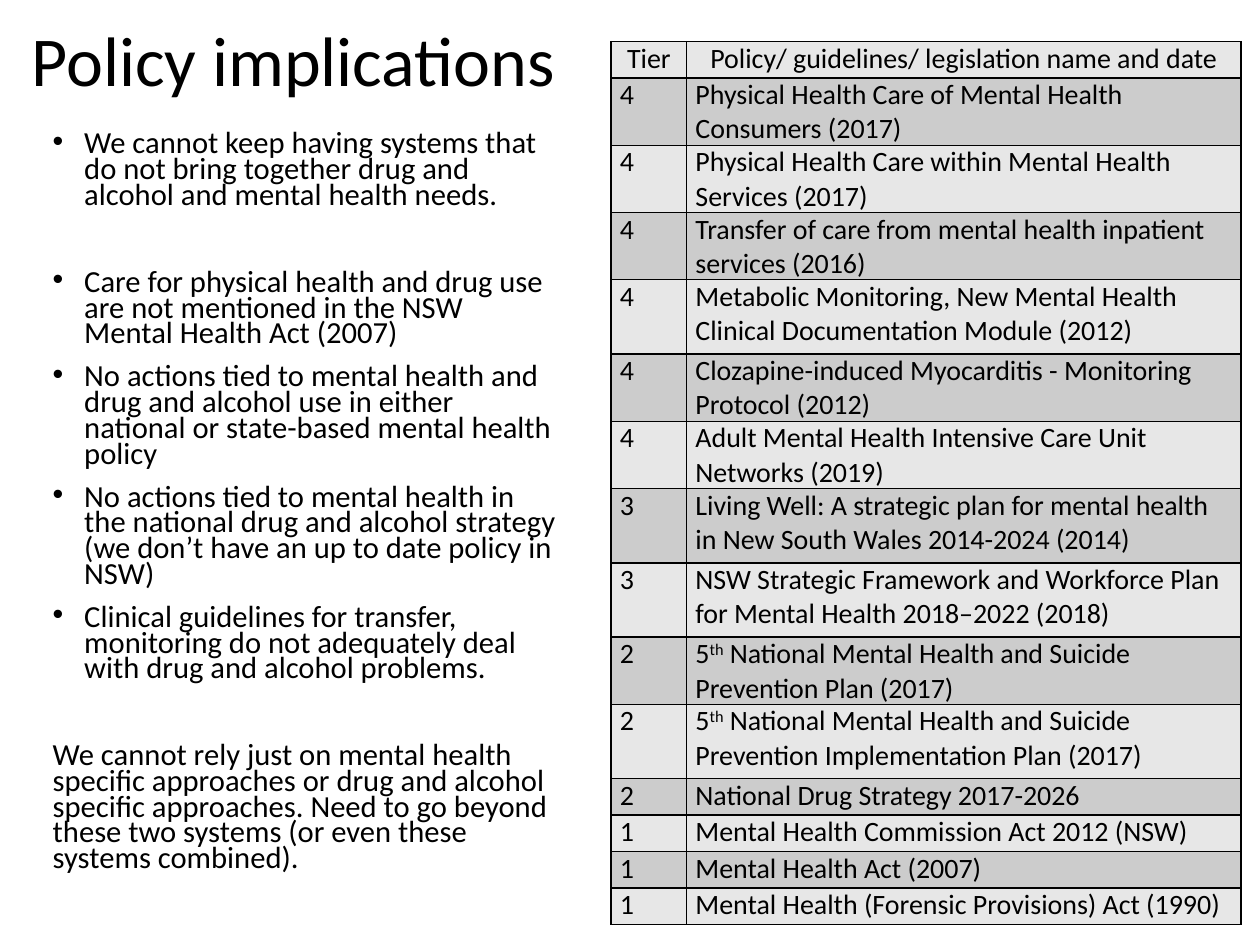
from typing import NamedTuple

from lxml.etree import SubElement
from pptx import Presentation
from pptx.dml.color import RGBColor
from pptx.enum.text import MSO_ANCHOR, MSO_AUTO_SIZE, PP_ALIGN
from pptx.oxml import parse_xml
from pptx.oxml.ns import nsdecls, qn
from pptx.util import Inches, Pt

BLACK = RGBColor(0x00, 0x00, 0x00)
LIGHT = RGBColor(0xE7, 0xE7, 0xE7)
DARK = RGBColor(0xCC, 0xCC, 0xCC)
FONT = "Calibri"
GAP, WIDE_GAP = 10, 35
ROW, TALL_ROW = 0.29, 0.59


class Point(NamedTuple):
    text: str
    gap: float = GAP
    bullet: bool = True


class Policy(NamedTuple):
    tier: str
    name: str
    height: float = ROW
    ordinal: str = ""  # number written with a raised "th" before the name


POINTS = [
    Point("We cannot keep having systems that do not bring together drug and "
          "alcohol and mental health needs."),
    Point("Care for physical health and drug use are not mentioned in the NSW "
          "Mental Health Act (2007)", WIDE_GAP),
    Point("No actions tied to mental health and drug and alcohol use in either "
          "national or state-based mental health policy"),
    Point("No actions tied to mental health in the national drug and alcohol "
          "strategy (we don’t have an up to date policy in NSW)"),
    Point("Clinical guidelines for transfer, monitoring do not adequately deal "
          "with drug and alcohol problems."),
    Point("We cannot rely just on mental health specific approaches or drug and "
          "alcohol specific approaches. Need to go beyond these two systems "
          "(or even these systems combined).", WIDE_GAP, bullet=False),
]

POLICIES = [
    Policy("Tier", "Policy/ guidelines/ legislation name and date"),
    Policy("4", "Physical Health Care of Mental Health Consumers (2017)"),
    Policy("4", "Physical Health Care within Mental Health Services (2017)"),
    Policy("4", "Transfer of care from mental health inpatient services (2016)"),
    Policy("4", "Metabolic Monitoring, New Mental Health Clinical Documentation "
                "Module (2012)", TALL_ROW),
    Policy("4", "Clozapine-induced Myocarditis - Monitoring Protocol (2012)"),
    Policy("4", "Adult Mental Health Intensive Care Unit Networks (2019)"),
    Policy("3", "Living Well: A strategic plan for mental health in New South "
                "Wales 2014-2024 (2014)", TALL_ROW),
    Policy("3", "NSW Strategic Framework and Workforce Plan for Mental Health "
                "2018–2022 (2018)", TALL_ROW),
    Policy("2", " National Mental Health and Suicide Prevention Plan (2017)",
           ordinal="5"),
    Policy("2", " National Mental Health and Suicide Prevention Implementation "
                "Plan (2017)", TALL_ROW, ordinal="5"),
    Policy("2", "National Drug Strategy 2017-2026"),
    Policy("1", "Mental Health Commission Act 2012 (NSW)"),
    Policy("1", "Mental Health Act (2007)"),
    Policy("1", "Mental Health (Forensic Provisions) Act (1990)"),
]


def add_run(p, text: str, size: float, raised: bool = False) -> None:
    r = p.add_run()
    r.text = text
    r.font.size = Pt(size)
    r.font.name = FONT
    r.font.color.rgb = BLACK
    if raised:
        r.font._element.set("baseline", "30000")


def add_bullet(p) -> None:
    pPr = p._p.get_or_add_pPr()
    pPr.set("marL", str(Inches(0.25)))
    pPr.set("indent", str(-Inches(0.25)))
    SubElement(pPr, qn("a:buFont")).set("typeface", "Arial")
    SubElement(pPr, qn("a:buChar")).set("char", "•")


def add_borders(cell) -> None:
    tcPr = cell._tc.get_or_add_tcPr()
    for i, side in enumerate(("lnL", "lnR", "lnT", "lnB")):
        tcPr.insert(i, parse_xml(
            f'<a:{side} {nsdecls("a")} w="{Pt(1)}"><a:solidFill>'
            f'<a:srgbClr val="{BLACK}"/></a:solidFill></a:{side}>'))


def set_title(s, text: str) -> None:
    title = s.shapes.title
    title.left, title.top = Inches(0.15), Inches(0)
    title.width, title.height = Inches(5.21), Inches(1.01)
    tf = title.text_frame
    tf.auto_size = MSO_AUTO_SIZE.NONE
    tf.vertical_anchor = MSO_ANCHOR.MIDDLE
    p = tf.paragraphs[0]
    p.alignment = PP_ALIGN.LEFT
    p.line_spacing = 0.9
    add_run(p, text, 40)


def add_points(s, points: list[Point]) -> None:
    sp = s.shapes.add_textbox(Inches(0.32), Inches(1.01), Inches(4.21), Inches(6.18))
    tf = sp.text_frame
    tf.word_wrap = True
    for i, point in enumerate(points):
        p = tf.add_paragraph() if i else tf.paragraphs[0]
        p.line_spacing = 0.7
        p.space_before = Pt(point.gap)
        if point.bullet:
            add_bullet(p)
        add_run(p, point.text, 17.5)


def format_cell(cell, fill: RGBColor, centred: bool):
    """Style one table cell and return its paragraph."""
    cell.fill.solid()
    cell.fill.fore_color.rgb = fill
    cell.margin_left = cell.margin_right = Inches(0.07)
    cell.margin_top = cell.margin_bottom = 0
    add_borders(cell)
    p = cell.text_frame.paragraphs[0]
    p.alignment = PP_ALIGN.CENTER if centred else PP_ALIGN.LEFT
    return p


def add_policy_table(s, policies: list[Policy]) -> None:
    height = sum(policy.height for policy in policies)
    table = s.shapes.add_table(len(policies), 2, Inches(4.85), Inches(0.33),
                               Inches(5), Inches(height)).table
    table.columns[0].width, table.columns[1].width = Inches(0.6), Inches(4.4)
    for i, policy in enumerate(policies):
        table.rows[i].height = Inches(policy.height)
        fill = DARK if i % 2 else LIGHT
        tier, name = (format_cell(table.cell(i, j), fill, i == 0) for j in range(2))
        add_run(tier, policy.tier, 16)
        if policy.ordinal:
            add_run(name, policy.ordinal, 16)
            add_run(name, "th", 16, raised=True)
        add_run(name, policy.name, 16)


def main() -> None:
    prs = Presentation()
    prs.slide_width, prs.slide_height = Inches(10), Inches(7.5)
    s = prs.slides.add_slide(prs.slide_layouts[5])

    # Left: title and argument
    set_title(s, "Policy implications")
    add_points(s, POINTS)

    # Right: policies by tier
    add_policy_table(s, POLICIES)
    prs.save("out.pptx")


if __name__ == "__main__":
    main()
